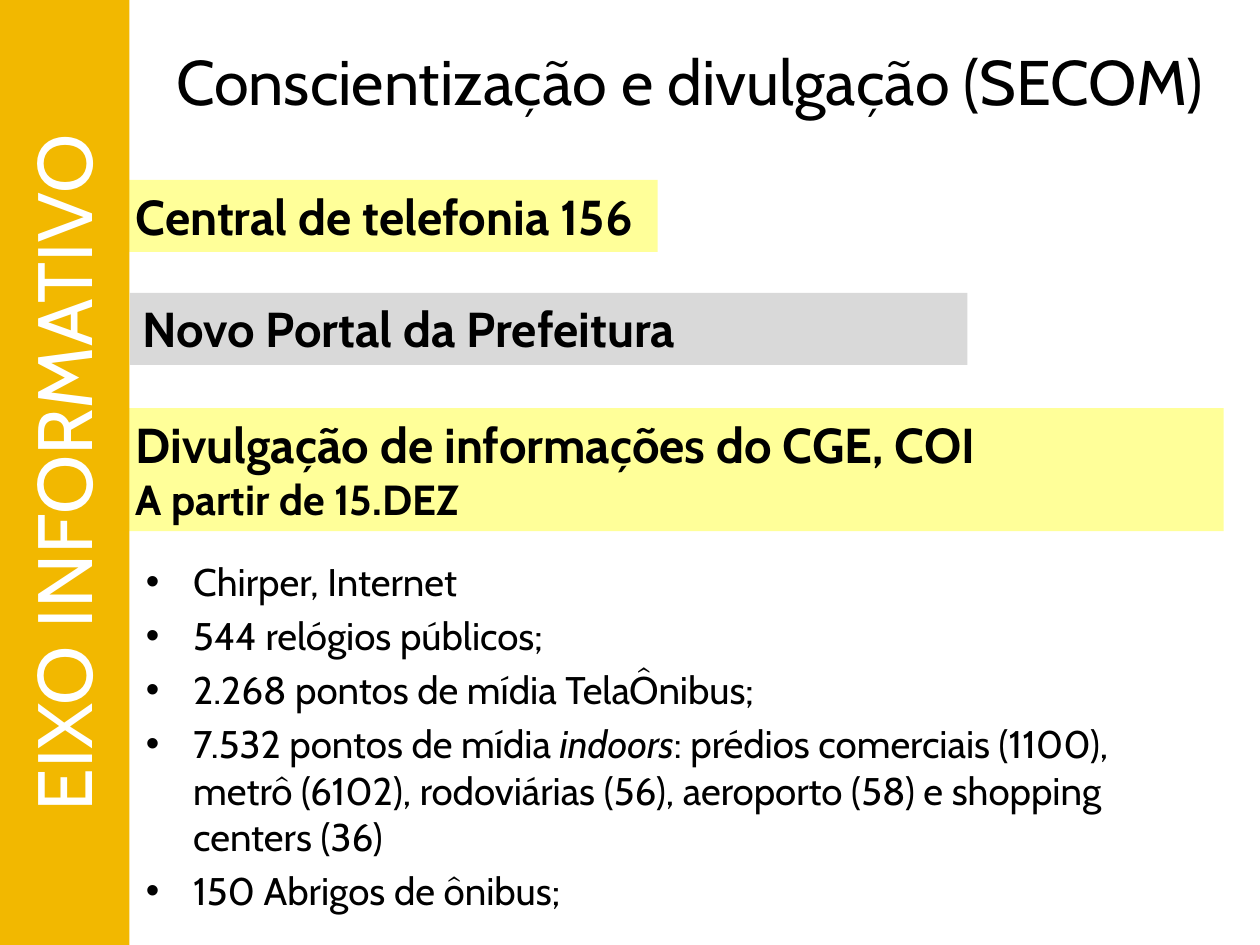
from lxml import etree
from pptx import Presentation
from pptx import util as u
from pptx.dml.color import RGBColor
from pptx.enum import shapes, text
from pptx.oxml.ns import qn

FONT = "Cabin"
BLACK = RGBColor(0x00, 0x00, 0x00)
WHITE = RGBColor(0xFF, 0xFF, 0xFF)
AMBER = RGBColor(0xF2, 0xB8, 0x00)
YELLOW = RGBColor(0xFF, 0xFF, 0x99)
GREY = RGBColor(0xD9, 0xD9, 0xD9)

MEDIA = [
    [("Chirper, Internet", False)],
    [("544 relógios públicos;", False)],
    [("2.268 pontos de mídia TelaÔnibus;", False)],
    [
        ("7.532 pontos de mídia ", False),
        ("indoors", True),
        (": prédios comerciais (1100), metrô (6102), rodoviárias (56), "
         "aeroporto (58) e shopping centers (36)", False),
    ],
    [("150 Abrigos de ônibus;", False)],
]


def add_run(paragraph, words, size, color=BLACK, bold=False, italic=False):
    """Append one formatted run to a paragraph."""
    run = paragraph.add_run()
    run.text = words
    font = run.font
    font.name, font.size, font.bold, font.italic = FONT, u.Pt(size), bold, italic
    font.color.rgb = color


def next_paragraph(frame, index):
    """Return the first paragraph of a frame, or a new one after it."""
    return frame.add_paragraph() if index else frame.paragraphs[0]


def add_band(slide, box, fill, lines, color=BLACK, bold=True, wrap=True,
             align=text.PP_ALIGN.LEFT, anchor=text.MSO_ANCHOR.TOP):
    """Add a filled rectangle holding (words, size) lines."""
    shape = slide.shapes.add_shape(
        shapes.MSO_SHAPE.RECTANGLE, *(u.Pt(length) for length in box))
    shape.shadow.inherit = False
    shape.fill.solid()
    shape.fill.fore_color.rgb = fill
    shape.line.fill.background()
    frame = shape.text_frame
    frame.word_wrap = wrap
    frame.vertical_anchor = anchor
    for index, (words, size) in enumerate(lines):
        paragraph = next_paragraph(frame, index)
        paragraph.alignment = align
        add_run(paragraph, words, size, color, bold)
    return shape


def add_textbox(slide, box, wrap):
    """Add an empty text box and return its text frame."""
    shape = slide.shapes.add_textbox(*(u.Pt(length) for length in box))
    shape.text_frame.word_wrap = wrap
    return shape.text_frame


def add_bullet(paragraph, indent):
    """Give a paragraph a round bullet with a hanging indent."""
    properties = paragraph._p.get_or_add_pPr()
    properties.set("marL", str(u.Pt(indent)))
    properties.set("indent", str(-u.Pt(indent)))
    etree.SubElement(properties, qn("a:buFont"), typeface="Arial")
    etree.SubElement(properties, qn("a:buChar"), char="•")


def add_bullet_list(slide, box, items, size):
    """Add a bulleted list whose items are lists of (words, italic) runs."""
    frame = add_textbox(slide, box, True)
    for index, runs in enumerate(items):
        paragraph = next_paragraph(frame, index)
        paragraph.space_before = u.Pt(4.5)
        add_bullet(paragraph, 27)
        for words, italic in runs:
            add_run(paragraph, words, size, italic=italic)


def main():
    """Build the slide and save it."""
    presentation = Presentation()
    presentation.slide_width, presentation.slide_height = u.Pt(720), u.Pt(540)
    slide = presentation.slides.add_slide(presentation.slide_layouts[6])

    add_band(slide, (74.2, 167.3, 478.6, 41.2), GREY,
             [("Novo Portal da Prefeitura", 28)])
    add_band(slide, (70.6, 233.2, 628.6, 70.3), YELLOW,
             [("Divulgação de informações do CGE, COI", 28),
              ("A partir de 15.DEZ", 24)])
    add_band(slide, (70.6, 102.8, 305.3, 41.2), YELLOW,
             [("Central de telefonia 156", 28)], wrap=False)
    sidebar = add_band(slide, (-237, 231.8, 545, 77), AMBER,
                       [("EIXO INFORMATIVO", 44)], color=WHITE, bold=False,
                       align=text.PP_ALIGN.CENTER, anchor=text.MSO_ANCHOR.MIDDLE)
    sidebar.rotation = 270

    add_bullet_list(slide, (76.3, 315.4, 622.8, 206), MEDIA, 22)
    title = add_textbox(slide, (93.6, 20.9, 615.6, 51), False)
    add_run(title.paragraphs[0], "Conscientização e divulgação (SECOM)", 36)
    presentation.save("out.pptx")


if __name__ == "__main__":
    main()
